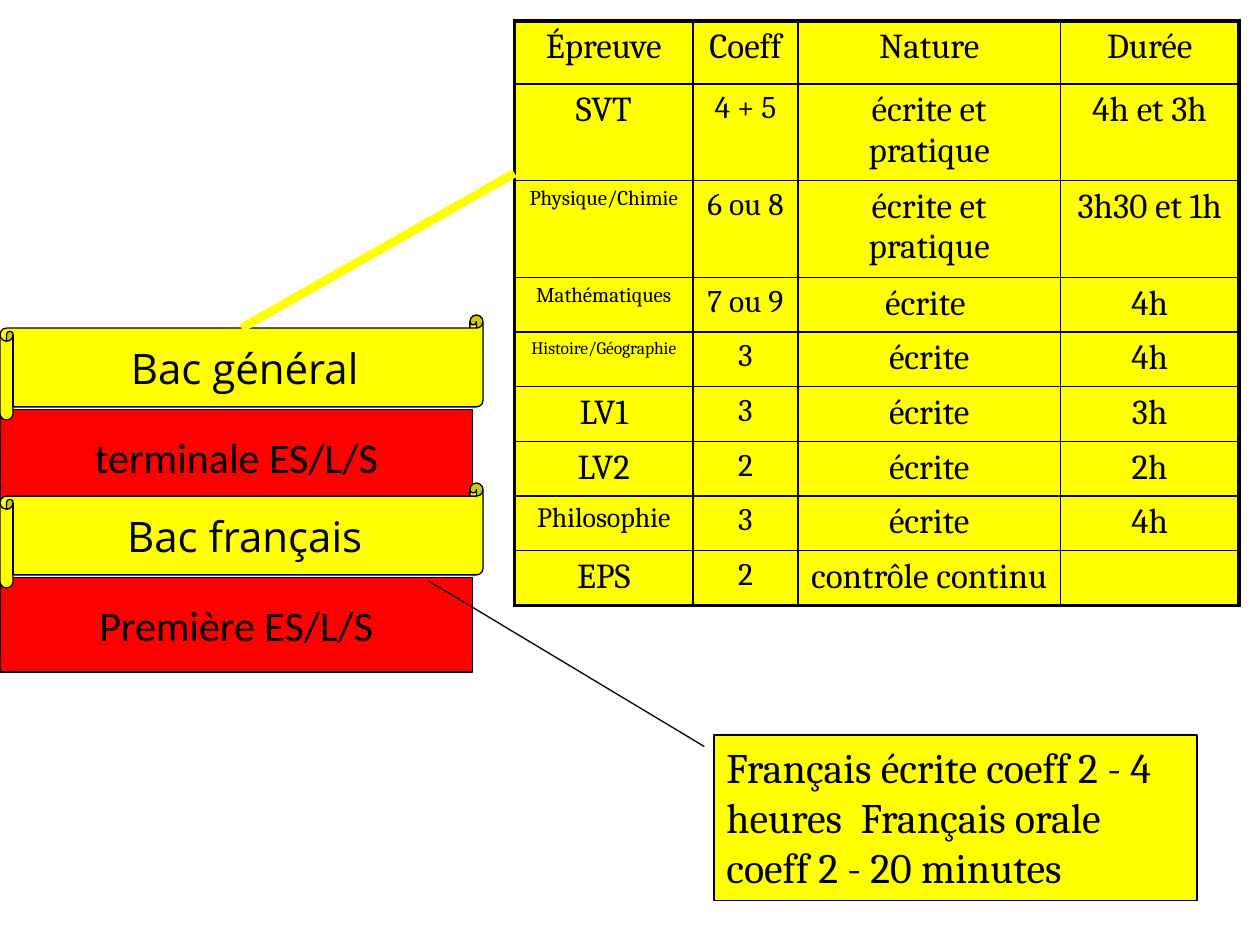
from dataclasses import dataclass

from lxml import etree
from pptx import Presentation
from pptx.dml.color import RGBColor
from pptx.enum.shapes import MSO_CONNECTOR, MSO_SHAPE
from pptx.enum.text import MSO_ANCHOR, MSO_AUTO_SIZE, PP_ALIGN
from pptx.oxml.ns import qn
from pptx.util import Inches, Pt

RECT = MSO_SHAPE.RECTANGLE
SCROLL = MSO_SHAPE.HORIZONTAL_SCROLL
CALL = MSO_SHAPE.LINE_CALLOUT_1
LINE = MSO_CONNECTOR.STRAIGHT
MID = MSO_ANCHOR.MIDDLE
TOP = MSO_ANCHOR.TOP
LEFT = PP_ALIGN.LEFT
CENTER = PP_ALIGN.CENTER
GROW = MSO_AUTO_SIZE.SHAPE_TO_FIT_TEXT
COLS, ROWS = 120, 90
UNIT = Inches(10) / COLS


@dataclass(frozen=True)
class Theme:
    """Colours, fonts, type sizes and line widths."""
    ink: str = "000000"
    gold: str = "FFFF00"
    red: str = "FF0000"
    level: str = "Calibri"
    exam: str = "Open Sans"
    serif: str = "Cambria"
    large: int = 24
    cell: int = 20
    coeff: int = 18
    thin: float = 0.75
    rule: float = 1
    frame: float = 2.25
    link: float = 5


THEME = Theme()
LEVELS = [("Bac général", "terminale ES/L/S"), ("Bac français", "Première ES/L/S")]
WIDTHS = [17, 10, 25, 17]
SMALL = {"Physique/Chimie": 12, "Mathématiques": 12,
         "Histoire/Géographie": 10, "Philosophie": 16}
EXAMS = [
    ("Épreuve", "Coeff", "Nature", "Durée"),
    ("SVT", "4 + 5", "écrite et pratique", "4h et 3h"),
    ("Physique/Chimie", "6 ou 8", "écrite et pratique", "3h30 et 1h"),
    ("Mathématiques", "7 ou 9", "écrite ", "4h"),
    ("Histoire/Géographie", "3", "écrite", "4h"),
    ("LV1", "3", "écrite", "3h"),
    ("LV2", "2", "écrite", "2h"),
    ("Philosophie", "3", "écrite", "4h"),
    ("EPS", "2", "contrôle continu", ""),
]


def grid(*cells):
    """Turn grid counts into slide lengths."""
    return [round(n * UNIT) for n in cells]


def write(frame, text, font, size, align):
    """Add one run of text to the first paragraph of a frame."""
    para = frame.paragraphs[0]
    para.alignment = align
    run = para.add_run()
    run.text = text
    run.font.name = font
    run.font.size = Pt(size)
    run.font.color.rgb = RGBColor.from_string(THEME.ink)


def panel(slide, kind, box, fill, text, font, align=CENTER, anchor=MID, wrap=False):
    """Place a filled and outlined shape with its text."""
    shape = slide.shapes.add_shape(kind, *grid(*box))
    shape.shadow.inherit = False
    shape.fill.solid()
    shape.fill.fore_color.rgb = RGBColor.from_string(fill)
    shape.line.color.rgb = RGBColor.from_string(THEME.ink)
    shape.line.width = Pt(THEME.thin)
    shape.text_frame.word_wrap = wrap
    shape.text_frame.vertical_anchor = anchor
    write(shape.text_frame, text, font, THEME.large, align)
    return shape


def levels(slide, box):
    """Stack the class boxes, then the exam scrolls that overlap them."""
    left, top, wide, high = box
    step = high / 2
    for i, (_, name) in reversed(list(enumerate(LEVELS))):
        panel(slide, RECT, (left, top + i * step + 9, wide - 1, 9),
              THEME.red, name, THEME.level)
    for i, (name, _) in reversed(list(enumerate(LEVELS))):
        panel(slide, SCROLL, (left, top + i * step, wide, 10),
              THEME.gold, name, THEME.exam)


def note(slide, box):
    """Place the callout about the French exam."""
    shape = panel(slide, CALL, box, THEME.gold,
                  "Français écrite coeff 2 - 4 heures  Français orale coeff 2 - 20 minutes",
                  THEME.serif, LEFT, TOP, True)
    shape.text_frame.auto_size = GROW
    for i, share in enumerate((0.07, -0.02, -0.93, -0.59)):
        shape.adjustments[i] = share


def edge(cell, side, width):
    """Draw one border of a cell."""
    line = etree.SubElement(cell._tc.get_or_add_tcPr(), qn("a:ln" + side), w=str(Pt(width)))
    fill = etree.SubElement(line, qn("a:solidFill"))
    etree.SubElement(fill, qn("a:srgbClr"), val=THEME.ink)


def exams(slide, box):
    """Fill the table of exams, with a thick frame and thin rules."""
    count, span = len(EXAMS), len(WIDTHS)
    table = slide.shapes.add_table(count, span, *grid(*box)).table
    table.first_row = table.horz_banding = False
    for col, wide in zip(table.columns, WIDTHS):
        col.width = grid(box[2] * wide / sum(WIDTHS))[0]
    for r, texts in enumerate(EXAMS):
        table.rows[r].height = Inches({0: 0.5, 1: 0.48}.get(r, 0.43))
        for c, text in enumerate(texts):
            cell = table.cell(r, c)
            outer = {"L": c == 0, "R": c == span - 1, "T": r == 0, "B": r == count - 1}
            for side, thick in outer.items():
                edge(cell, side, THEME.frame if thick else THEME.rule)
            cell.fill.solid()
            cell.fill.fore_color.rgb = RGBColor.from_string(THEME.gold)
            if text:
                size = THEME.coeff if r and c == 1 else SMALL.get(text, THEME.cell)
                write(cell.text_frame, text, THEME.serif, size, CENTER)


def link(slide, box):
    """Join the general exam to its table with a rising line."""
    left, top, wide, high = box
    line = slide.shapes.add_connector(LINE, *grid(left, top + high, left + wide, top))
    line.line.color.rgb = RGBColor.from_string(THEME.gold)
    line.line.width = Pt(THEME.link)
    etree.SubElement(line._element.spPr, qn("a:effectLst"))


def main():
    """Build and save the slide."""
    deck = Presentation()
    deck.slide_width, deck.slide_height = grid(COLS, ROWS)
    slide = deck.slides.add_slide(deck.slide_layouts[6])
    levels(slide, (0, 30, 46, 32))
    note(slide, (68, 70, 46, 15.75))
    exams(slide, (49, 2, 69, 49.3))
    link(slide, (23, 16.5, 26, 14.75))
    deck.save("out.pptx")


if __name__ == "__main__":
    main()
